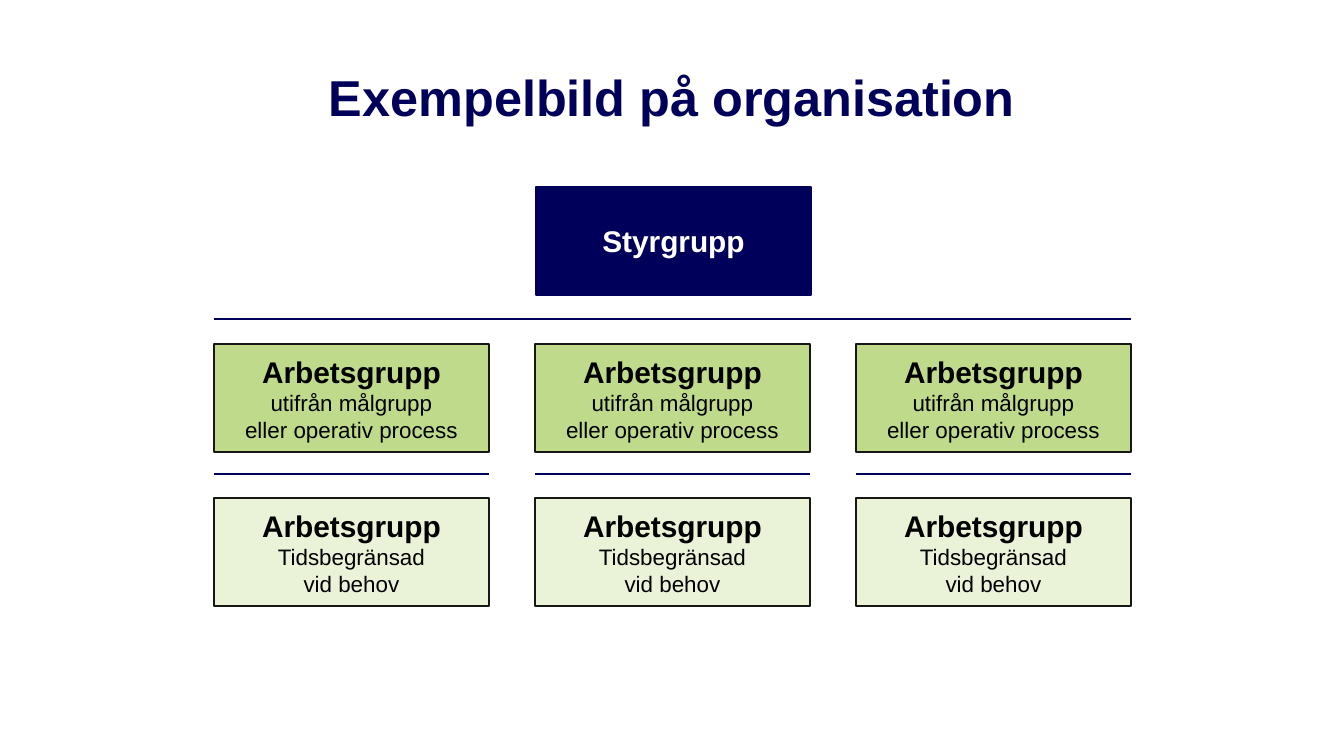
from lxml.etree import SubElement
from pptx import Presentation
from pptx.dml.color import RGBColor
from pptx.enum.shapes import MSO_CONNECTOR, MSO_SHAPE
from pptx.enum.text import MSO_ANCHOR, PP_ALIGN
from pptx.oxml.ns import qn
from pptx.util import Pt

PX = 914400 / 134.4
NAVY, RULE, EDGE = "00005A", "000058", "181717"

TITLE = "Exempelbild på organisation"
BOARD = "Styrgrupp"
GROUP_ROWS = [
    (344, "BFDA8B", ["Arbetsgrupp", "utifrån målgrupp", "eller operativ process"]),
    (498, "EAF3D8", ["Arbetsgrupp", "Tidsbegränsad", "vid behov"]),
]

LEFT, STEP, COLUMNS = 214, 321, 3
BOX_W, BOX_H = 275, 108
RIGHT = LEFT + (COLUMNS - 1) * STEP + BOX_W


def px(n):
    return round(n * PX)


def rgb(value):
    return RGBColor.from_string(value)


def write(sp, lines, color, head_size, body_size=12):
    """Centre the lines; the first is a bold heading."""
    tf = sp.text_frame
    tf.word_wrap = True
    tf.vertical_anchor = MSO_ANCHOR.MIDDLE
    tf.text = "\n".join(lines)
    for i, p in enumerate(tf.paragraphs):
        p.alignment = PP_ALIGN.CENTER
        font = p.runs[0].font
        font.name = "Arial"
        font.size = Pt(body_size if i else head_size)
        font.bold = i == 0
        font.color.rgb = rgb(color)


def add_title(s):
    sp = s.shapes.add_textbox(px(223), px(62), px(898), px(69))
    tf = sp.text_frame
    tf.margin_left = tf.margin_right = tf.margin_top = tf.margin_bottom = 0
    write(sp, [TITLE], NAVY, 27)


def add_box(s, x, y, fill, edge, lines, color):
    sp = s.shapes.add_shape(MSO_SHAPE.RECTANGLE, px(x), px(y), px(BOX_W), px(BOX_H))
    sp.shadow.inherit = False
    sp.fill.solid()
    sp.fill.fore_color.rgb = rgb(fill)
    sp.line.color.rgb = rgb(edge)
    sp.line.width = Pt(0.75)
    write(sp, lines, color, 16)


def add_rule(s, x1, x2, y):
    line = s.shapes.add_connector(MSO_CONNECTOR.STRAIGHT, px(x1), px(y), px(x2), px(y))
    line.line.color.rgb = rgb(RULE)
    line.line.width = Pt(1)
    SubElement(line._element.spPr, qn("a:effectLst"))


prs = Presentation()
prs.slide_width, prs.slide_height = px(1344), px(756)
s = prs.slides.add_slide(prs.slide_layouts[6])

add_title(s)
add_box(s, LEFT + STEP + 1, 187, NAVY, NAVY, [BOARD], "FFFFFF")

columns = [LEFT + i * STEP for i in range(COLUMNS)]
for y, fill, lines in GROUP_ROWS:
    for x in columns:
        add_box(s, x, y, fill, EDGE, lines, "000000")

add_rule(s, LEFT, RIGHT, 319)
for x in columns:
    add_rule(s, x, x + BOX_W, 474)

prs.save("out.pptx")
